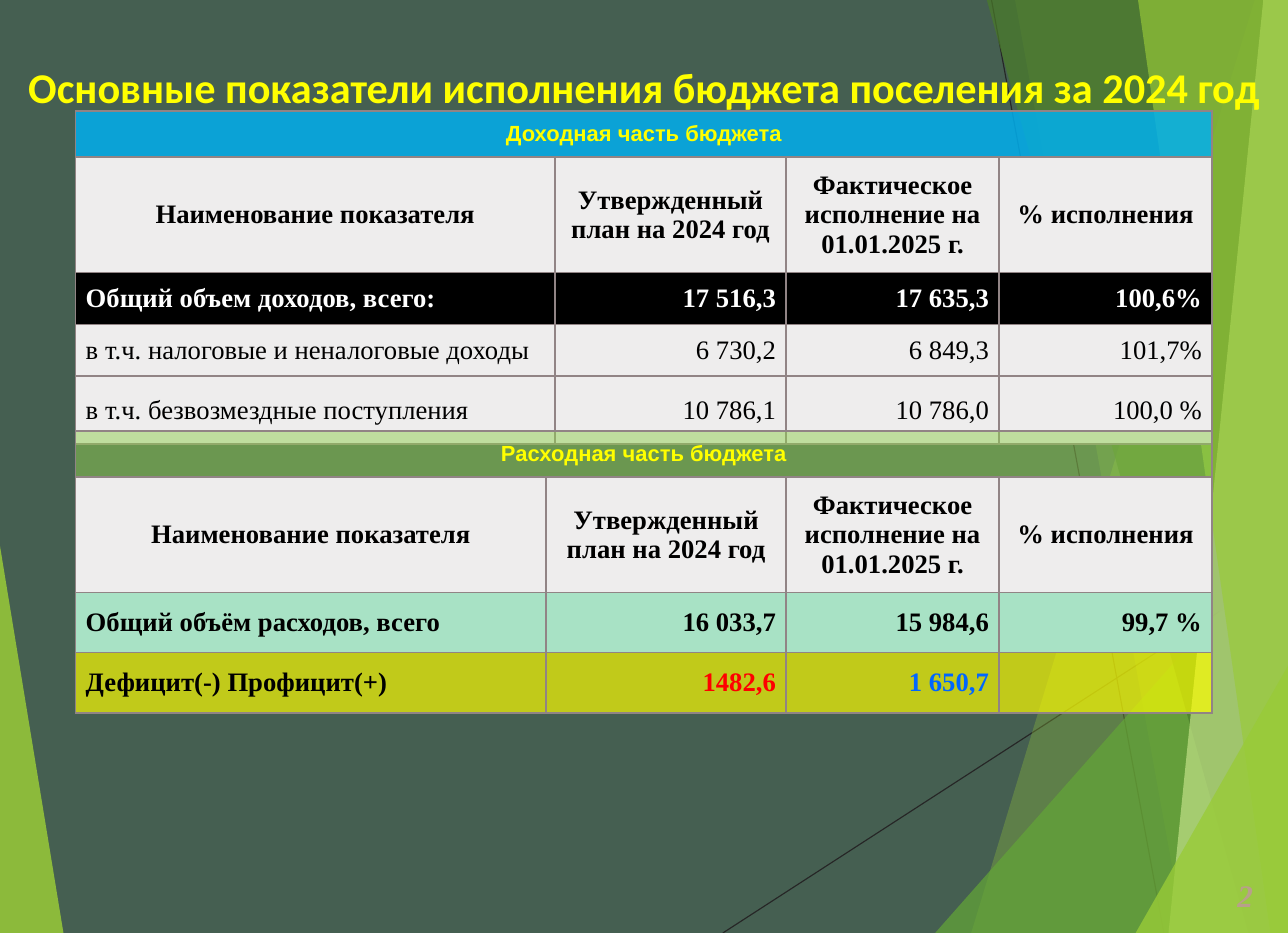
from lxml import etree
from pptx import Presentation
from pptx import util as u
from pptx.dml.color import RGBColor
from pptx.enum import shapes, text
from pptx.oxml import ns

Pt = u.Pt
WIDTH, HEIGHT = 822.24, 595.44

BACKGROUND = RGBColor(0x45, 0x5F, 0x51)
LIME = RGBColor(0x99, 0xCB, 0x38)
GREEN = RGBColor(0x63, 0xA5, 0x37)
DARK_GREEN = RGBColor(0x4A, 0x7C, 0x29)
PALE_LIME = RGBColor(0xC2, 0xE0, 0x88)
LINE = RGBColor(0x26, 0x26, 0x26)
BORDER = RGBColor(0x91, 0x84, 0x85)
YELLOW = RGBColor(0xFF, 0xFF, 0x00)
SKY = RGBColor(0x00, 0xB0, 0xF0)
LEAF = RGBColor(0x92, 0xD0, 0x50)
GREY = RGBColor(0xEE, 0xED, 0xED)
MINT = RGBColor(0xA8, 0xE2, 0xC5)
BLACK = RGBColor(0x00, 0x00, 0x00)
WHITE = RGBColor(0xFF, 0xFF, 0xFF)
RED = RGBColor(0xFF, 0x00, 0x00)
BLUE = RGBColor(0x00, 0x66, 0xFF)
TAN = RGBColor(0xB8, 0xA0, 0x8A)

LEFT, CENTER, RIGHT = (text.PP_ALIGN.LEFT, text.PP_ALIGN.CENTER, text.PP_ALIGN.RIGHT)
BANNER = {"size": Pt(14), "name": "Arial", "bold": True, "color": YELLOW}
BODY = {"size": Pt(17), "name": "Times New Roman", "bold": False, "color": BLACK}
STRONG = {**BODY, "bold": True}
HEADINGS = ["Наименование показателя", "Утвержденный план на 2024 год",
            "Фактическое исполнение на 01.01.2025 г.", "% исполнения"]


def set_values(target, values):
    for name, value in values.items():
        setattr(target, name, value)


def write(frame, words, align, font):
    paragraph = frame.paragraphs[0]
    paragraph.alignment = align
    if words:
        run = paragraph.add_run()
        run.text = words
        set_values(run.font, {key: font[key] for key in font if key != "color"})
        run.font.color.rgb = font["color"]
    return paragraph


def paint(fill, properties, color, opacity=100):
    fill.solid()
    fill.fore_color.rgb = color
    if opacity < 100:
        tone = properties.find(ns.qn("a:solidFill"))[0]
        etree.SubElement(tone, ns.qn("a:alpha"), val=str(opacity * 1000))


def add_line(slide, start, end):
    line = slide.shapes.add_connector(shapes.MSO_CONNECTOR.STRAIGHT,
                                      *[Pt(value) for value in start + end])
    line.line.color.rgb = LINE
    line.line.width = Pt(0.75)
    etree.SubElement(line.element.spPr, ns.qn("a:effectLst"))


def add_shard(slide, points, color, opacity):
    corners = [(Pt(x), Pt(y)) for x, y in points]
    builder = slide.shapes.build_freeform(*corners[0])
    builder.add_line_segments(corners[1:])
    shard = builder.convert_to_shape()
    shard.shadow.inherit = False
    shard.line.fill.background()
    paint(shard.fill, shard.element.spPr, color, opacity)


def add_band(slide, top_x, bottom_x, color, opacity):
    add_shard(slide, [(top_x, 0), (bottom_x, HEIGHT), (WIDTH, HEIGHT), (WIDTH, 0)],
              color, opacity)


def add_corner(slide, bottom_x, right_y, color, opacity):
    add_shard(slide, [(bottom_x, HEIGHT), (WIDTH, right_y), (WIDTH, HEIGHT)],
              color, opacity)


def add_decor(slide):
    add_line(slide, (461.5, HEIGHT), (WIDTH, 362))
    add_line(slide, (633, 0), (743, HEIGHT))
    add_shard(slide, [(0, 348.5), (40.5, HEIGHT), (0, HEIGHT)], LIME, 85)
    add_band(slide, 801, 620, LIME, 30)
    add_band(slide, 648, 756, LIME, 20)
    add_corner(slide, 597, 340.5, GREEN, 72)
    add_band(slide, 630, 797, DARK_GREEN, 70)
    add_band(slide, 806.5, 746, PALE_LIME, 70)
    add_band(slide, 726.5, 811, LIME, 65)
    add_corner(slide, 725, 425, LIME, 80)


def add_title(slide, words):
    title = slide.shapes.title
    set_values(title, {"left": 0, "top": Pt(40), "width": Pt(WIDTH), "height": Pt(36)})
    set_values(title.text_frame, {
        "word_wrap": True, "auto_size": text.MSO_AUTO_SIZE.NONE,
        "vertical_anchor": text.MSO_ANCHOR.MIDDLE, "margin_left": Pt(8),
        "margin_right": Pt(8), "margin_top": Pt(4), "margin_bottom": Pt(4)})
    paragraph = write(title.text_frame, words, CENTER, {
        "size": Pt(27), "name": "Calibri", "bold": True, "color": YELLOW})
    paragraph.line_spacing = 0.8
    title.element.getparent().append(title.element)


def add_borders(cell):
    properties = cell._tc.get_or_add_tcPr()
    for index, side in enumerate(["lnL", "lnR", "lnT", "lnB"]):
        border = etree.Element(ns.qn(f"a:{side}"), w=str(Pt(1)))
        fill = etree.SubElement(border, ns.qn("a:solidFill"))
        etree.SubElement(fill, ns.qn("a:srgbClr"), val=str(BORDER))
        properties.insert(index, border)


def format_cell(cell, words, align, font, color, opacity):
    set_values(cell, {"vertical_anchor": text.MSO_ANCHOR.MIDDLE,
                      **{f"margin_{side}": Pt(6.5)
                         for side in ("left", "right", "top", "bottom")}})
    paint(cell.fill, cell._tc.get_or_add_tcPr(), color, opacity)
    add_borders(cell)
    write(cell.text_frame, words, align, font)


def add_budget_table(slide, top, widths, heights, banner, body):
    rows = [(banner[0], *banner[1:]), (HEADINGS, GREY, 100, [STRONG] * 4), *body]
    table = slide.shapes.add_table(len(rows), len(widths), Pt(48.24), Pt(top),
                                   Pt(sum(widths)), Pt(sum(heights))).table
    set_values(table, {"first_row": False, "horz_banding": False})
    for column, width in zip(table.columns, widths):
        column.width = Pt(width)
    for row, height in zip(table.rows, heights):
        row.height = Pt(height)
    table.cell(0, 0).merge(table.cell(0, len(widths) - 1))
    for row_index, (words, color, opacity, fonts) in enumerate(rows):
        for column_index, (entry, font) in enumerate(zip(words, fonts)):
            align = CENTER if row_index < 2 else RIGHT if column_index else LEFT
            format_cell(table.cell(row_index, column_index), entry, align, font,
                        color, opacity)


def add_page_number(slide, number):
    box = slide.shapes.add_textbox(Pt(760), Pt(556), Pt(47), Pt(30))
    set_values(box.text_frame, {"word_wrap": True,
                                "vertical_anchor": text.MSO_ANCHOR.MIDDLE})
    write(box.text_frame, number, RIGHT, {**STRONG, "size": Pt(20), "italic": True,
                                          "color": TAN})


def main():
    presentation = Presentation()
    presentation.slide_width, presentation.slide_height = Pt(WIDTH), Pt(HEIGHT)
    slide = presentation.slides.add_slide(presentation.slide_layouts[5])
    slide.background.fill.solid()
    slide.background.fill.fore_color.rgb = BACKGROUND
    add_decor(slide)
    add_title(slide, "Основные показатели исполнения бюджета поселения за 2024 год")
    add_budget_table(
        slide, 70.8, [306, 147.6, 136, 136], [29.5, 73.8, 33, 33, 43.2],
        (["Доходная часть бюджета"], SKY, 84, [BANNER]),
        [(["Общий объем доходов, всего:", "17 516,3", "17 635,3", "100,6%"],
          BLACK, 100, [{**STRONG, "color": WHITE}] * 4),
         (["в т.ч. налоговые и неналоговые доходы", "6 730,2", "6 849,3", "101,7%"],
          GREY, 100, [BODY] * 4),
         (["в т.ч. безвозмездные поступления", "10 786,1", "10 786,0", "100,0 %"],
          GREY, 100, [BODY] * 4)])
    add_budget_table(
        slide, 275, [300.4, 153.2, 136, 136], [29.5, 73.8, 38.4, 38.4],
        (["Расходная часть бюджета"], LEAF, 50, [BANNER]),
        [(["Общий объём расходов, всего", "16 033,7", "15 984,6", "99,7 %"],
          MINT, 100, [STRONG] * 4),
         (["Дефицит(-) Профицит(+)", "1482,6", "1 650,7", ""], YELLOW, 67,
          [STRONG, {**STRONG, "color": RED}, {**STRONG, "color": BLUE}, STRONG])])
    add_page_number(slide, "2")
    presentation.save("out.pptx")


if __name__ == "__main__":
    main()
